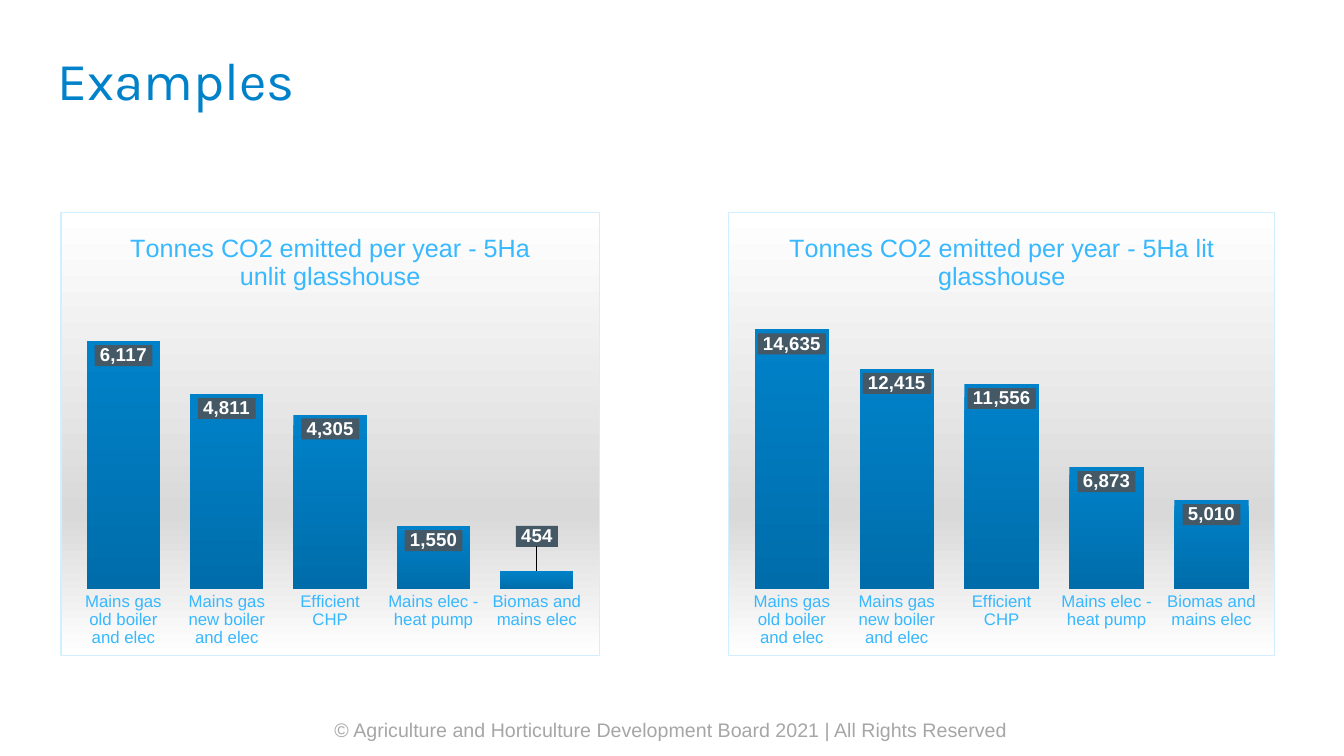
from copy import deepcopy
from dataclasses import dataclass
from typing import Any

from lxml.etree import SubElement as Sub
from pptx import Presentation
from pptx.chart.chart import Chart
from pptx.chart.data import CategoryChartData as Data
from pptx.dml.color import RGBColor as Rgb
from pptx.enum.chart import XL_CHART_TYPE as Kind
from pptx.enum.chart import XL_LABEL_POSITION as Spot
from pptx.enum.chart import XL_TICK_MARK as Tick
from pptx.enum.text import MSO_ANCHOR as Anchor
from pptx.enum.text import PP_ALIGN as Align
from pptx.oxml import parse_xml
from pptx.oxml.ns import nsdecls, qn
from pptx.slide import Slide
from pptx.util import Inches, Pt

Stops = tuple[tuple[int, str], ...]


@dataclass(frozen=True)
class Theme:
    sans: str = "Arial"
    head: str = "Karla"
    blue: str = "0082CA"
    sky: str = "37B8FF"
    grey: str = "A6A6A6"
    white: str = "FFFFFF"
    tag: str = "445865"
    edge: str = "D1EFFF"
    bar: Stops = ((0, "0082CA"), (100, "006DAA"))
    back: Stops = ((0, "FFFFFF"), (68, "D9D9D9"), (100, "FFFFFF"))
    title: float = 38
    foot: float = 14
    chart: float = 18
    axis: float = 12
    label: float = 13.3
    base: float = 10


@dataclass(frozen=True)
class Box:
    left: float
    top: float
    width: float
    height: float

    def place(self) -> tuple[Inches, ...]:
        sides = (self.left, self.top, self.width, self.height)
        return tuple(Inches(side) for side in sides)


@dataclass(frozen=True)
class Label:
    text: str
    box: Box
    face: str
    size: float
    color: str
    format: dict[str, Any]


@dataclass(frozen=True)
class Panel:
    title: str
    box: Box
    values: tuple[int, ...]
    top: int
    lift: dict[int, float]


THEME = Theme()
NUMBER = '_-* #,##0_-;\\-* #,##0_-;_-* "-"??_-;_-@_'
PLOT = {"x": 0.02, "y": 0.21, "w": 0.96, "h": 0.64}
CATS = (
    "Mains gas old boiler and elec",
    "Mains gas new boiler and elec",
    "Efficient CHP",
    "Mains elec - heat pump",
    "Biomas and mains elec",
)
LABELS = (
    Label("© Agriculture and Horticulture Development Board 2021 | All Rights Reserved",
          Box(-0.01, 7.07, 13.33, 0.34), THEME.sans, THEME.foot, THEME.grey,
          {"alignment": Align.CENTER}),
    Label("Examples", Box(0.47, 0.19, 12.44, 1.28), THEME.head, THEME.title,
          THEME.blue, {"line_spacing": 0.9}),
)
PANELS = (
    Panel("Tonnes CO2 emitted per year - 5Ha unlit glasshouse",
          Box(0.6, 2.1, 5.35, 4.41), (6117, 4811, 4305, 1550, 454), 7000, {4: -0.11}),
    Panel("Tonnes CO2 emitted per year - 5Ha lit glasshouse",
          Box(7.22, 2.1, 5.43, 4.41), (14635, 12415, 11556, 6873, 5010), 16000, {}),
)


def apply(item: Any, format: dict[str, Any]) -> None:
    for name, value in format.items():
        setattr(item, name, value)


def style(font: Any, face: str, size: float, color: str, bold: bool = False) -> None:
    apply(font, {"name": face, "size": Pt(size), "bold": bold})
    font.color.rgb = Rgb.from_string(color)


def write(slide: Slide, label: Label) -> None:
    frame = slide.shapes.add_textbox(*label.box.place()).text_frame
    apply(frame, {"word_wrap": True, "vertical_anchor": Anchor.MIDDLE})
    para = frame.paragraphs[0]
    apply(para, {"text": label.text, **label.format})
    style(para.runs[0].font, label.face, label.size, label.color)


def shade(stops: Stops) -> str:
    """Return a gradient fill that runs from top to bottom."""
    marks = "".join(
        f'<a:gs pos="{pos * 1000}"><a:srgbClr val="{color}"/></a:gs>'
        for pos, color in stops
    )
    return f'<a:gradFill><a:gsLst>{marks}</a:gsLst><a:lin ang="5400000"/></a:gradFill>'


def solid(color: str) -> str:
    return f'<a:solidFill><a:srgbClr val="{color}"/></a:solidFill>'


def paint(fill: str, line: str = "<a:noFill/>") -> Any:
    """Return chart shape properties with a fill and a thin line."""
    return parse_xml(f'<c:spPr {nsdecls("c", "a")}>{fill}'
                     f'<a:ln w="{Pt(0.75)}">{line}</a:ln></c:spPr>')


def layout(sizes: dict[str, Any]) -> Any:
    node = parse_xml(f'<c:layout {nsdecls("c")}><c:manualLayout/></c:layout>')
    for name, value in sizes.items():
        Sub(node[0], qn(f"c:{name}"), val=str(value))
    return node


def tag(series: Any, lift: dict[int, float]) -> None:
    """Label each bar, and raise the labels named in lift."""
    labels = series.data_labels
    apply(labels, {"show_value": True, "position": Spot.INSIDE_END,
                   "number_format": NUMBER, "number_format_is_linked": False})
    style(labels.font, THEME.sans, THEME.label, THEME.white, True)
    root = labels.font and series.format and series._element.find(qn("c:dLbls"))
    root.find(qn("c:numFmt")).addnext(paint(solid(THEME.tag)))
    shared = [part for part in root if part.tag != qn("c:showLeaderLines")]
    for spot, (index, rise) in enumerate(lift.items()):
        item = parse_xml(f'<c:dLbl {nsdecls("c")}><c:idx val="{index}"/></c:dLbl>')
        item.append(layout({"x": 0, "y": rise}))
        item.extend(deepcopy(shared))
        root.insert(spot, item)


def frame(chart: Chart, title: str) -> None:
    """Set the title, the plot position and the background."""
    text = chart.chart_title.text_frame
    text.text = title
    style(text.paragraphs[0].runs[0].font, THEME.sans, THEME.chart, THEME.sky)
    chart.chart_title.include_in_layout = False
    space = chart._chartSpace
    area = space.find(".//" + qn("c:plotArea"))
    for old in area.findall(qn("c:layout")):
        area.remove(old)
    area.insert(0, layout({"layoutTarget": "inner", "xMode": "edge",
                           "yMode": "edge", **PLOT}))
    space.find(qn("c:chart")).addnext(paint(shade(THEME.back), solid(THEME.edge)))


def draw(slide: Slide, panel: Panel) -> None:
    data = Data()
    data.categories = CATS
    data.add_series("Series 1", panel.values)
    chart = slide.shapes.add_chart(
        Kind.COLUMN_CLUSTERED, *panel.box.place(), data).chart
    chart.has_legend = False
    style(chart.font, THEME.sans, THEME.base, THEME.blue)
    frame(chart, panel.title)
    cats = chart.category_axis
    apply(cats, {"major_tick_mark": Tick.NONE, "has_major_gridlines": False})
    cats.format.line.fill.background()
    style(cats.tick_labels.font, THEME.sans, THEME.axis, THEME.sky)
    apply(chart.value_axis, {"visible": False, "has_major_gridlines": False,
                             "minimum_scale": 0, "maximum_scale": panel.top})
    apply(chart.value_axis.tick_labels, {"number_format": NUMBER,
                                         "number_format_is_linked": False})
    plot = chart.plots[0]
    apply(plot, {"gap_width": 41, "vary_by_categories": False})
    bars = plot.series[0]
    bars.format.fill.background()
    root = bars._element
    root.replace(root.find(qn("c:spPr")), paint(shade(THEME.bar)))
    tag(bars, panel.lift)


def main() -> None:
    deck = Presentation()
    apply(deck, {"slide_width": Inches(13.33), "slide_height": Inches(7.5)})
    slide = deck.slides.add_slide(deck.slide_layouts[6])
    for label in LABELS:
        write(slide, label)
    for panel in PANELS:
        draw(slide, panel)
    deck.save("out.pptx")


if __name__ == "__main__":
    main()
